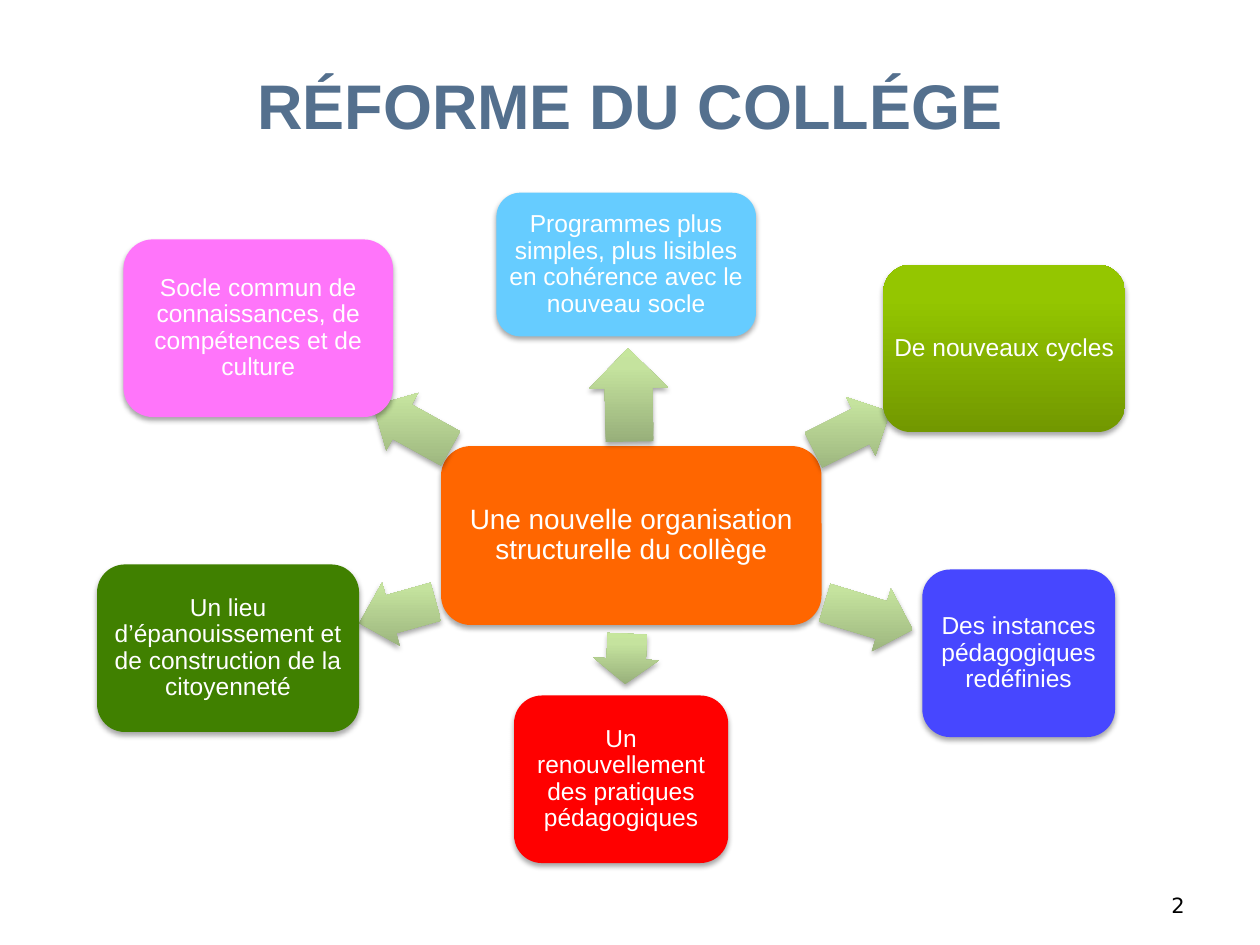
from lxml import etree
from pptx import Presentation
from pptx.dml.color import RGBColor
from pptx.enum.shapes import MSO_SHAPE
from pptx.enum.text import MSO_ANCHOR, PP_ALIGN
from pptx.oxml import parse_xml
from pptx.oxml.ns import nsdecls
from pptx.util import Inches, Pt

ROUND, ARROW = MSO_SHAPE.ROUNDED_RECTANGLE, MSO_SHAPE.RIGHT_ARROW
CENTER, RIGHT = PP_ALIGN.CENTER, PP_ALIGN.RIGHT
TOP, MIDDLE, BOTTOM = MSO_ANCHOR.TOP, MSO_ANCHOR.MIDDLE, MSO_ANCHOR.BOTTOM

COLORS = {
    "title": "54708E", "white": "FFFFFF", "black": "000000",
    "orange": "FF6600", "sky": "66CCFF", "blue": "4747FF",
    "red": "FF0000", "green": "408000", "pink": "FF75FA",
}
# Gradients run from bottom to top: (position in percent, colour)
FADES = {
    "lime": [(0, "729800"), (80, "94C600"), (100, "95C700")],
    "arrow": [(0, "97AF7A"), (80, "C5E39E"), (100, "C6E69D")],
}

TITLE = "RÉFORME DU COLLÉGE"
HUB = ("Une nouvelle organisation structurelle du collège", "orange",
       (3.5, 3.54, 3.02, 1.42))
# Text, fill, box place, arrow place, arrow rotation
THEMES = [
    ("Programmes plus simples, plus lisibles en cohérence avec le nouveau socle",
     "sky", (3.94, 1.53, 2.06, 1.14), (4.62, 2.82, 0.74, 0.63), 269),
    ("De nouveaux cycles",
     "lime", (7.01, 2.1, 1.92, 1.33), (6.42, 3.16, 0.68, 0.52), 333.4),
    ("Des instances pédagogiques redéfinies",
     "blue", (7.32, 4.52, 1.53, 1.33), (6.53, 4.63, 0.73, 0.52), 17),
    ("Un renouvellement des pratiques pédagogiques",
     "red", (4.08, 5.52, 1.7, 1.33), (4.77, 4.97, 0.4, 0.52), 92.4),
    ("Un lieu d’épanouissement et de construction de la citoyenneté",
     "green", (0.77, 4.48, 2.08, 1.33), (2.84, 4.6, 0.63, 0.52), 164.3),
    ("Socle commun de connaissances, de compétences et de culture",
     "pink", (0.98, 1.9, 2.14, 1.41), (2.92, 3.13, 0.7, 0.52), 209),
]

prs = Presentation()
prs.slide_width, prs.slide_height = Inches(10), Inches(7.5)
slide = prs.slides.add_slide(prs.slide_layouts[6])


def write(shape, text, size, color, align=CENTER, anchor=MIDDLE,
          font="Arial", bold=False):
    frame = shape.text_frame
    frame.text = text
    frame.word_wrap = True
    frame.vertical_anchor = anchor
    para = frame.paragraphs[0]
    para.alignment = align
    face = para.runs[0].font
    face.name, face.size, face.bold = font, Pt(size), bold
    face.color.rgb = RGBColor.from_string(COLORS[color])
    return para


def fade(shape, stops):
    """Fill with a gradient that stays upright when the shape turns."""
    shape.fill.gradient()
    grad = shape._element.spPr.find("{*}gradFill")
    grad.set("rotWithShape", "0")
    for part in list(grad):
        grad.remove(part)
    marks = "".join(f'<a:gs pos="{pos * 1000}"><a:srgbClr val="{color}"/></a:gs>'
                    for pos, color in stops)
    grad.append(parse_xml(f'<a:gsLst {nsdecls("a")}>{marks}</a:gsLst>'))
    grad.append(parse_xml(f'<a:lin {nsdecls("a")} ang="16200000" scaled="0"/>'))


def draw(kind, place, fill):
    shape = slide.shapes.add_shape(kind, *map(Inches, place))
    if fill in FADES:
        fade(shape, FADES[fill])
    else:
        shape.fill.solid()
        shape.fill.fore_color.rgb = RGBColor.from_string(COLORS[fill])
    shape.line.fill.background()
    # Soft shadow straight below
    shape.shadow.inherit = False
    effects = shape._element.spPr.find("{*}effectLst")
    glow = etree.SubElement(
        effects, effects.tag.replace("effectLst", "outerShdw"),
        blurRad=str(Pt(3.1)), dist=str(Pt(1.8)), dir="5400000", rotWithShape="0")
    tint = etree.SubElement(glow, glow.tag.replace("outerShdw", "srgbClr"),
                            val=COLORS["black"])
    etree.SubElement(tint, tint.tag.replace("srgbClr", "alpha"), val="35000")
    return shape


def card(text, fill, place, size):
    box = draw(ROUND, place, fill)
    frame = box.text_frame
    frame.margin_left = frame.margin_right = Inches(0.02)
    frame.margin_top = frame.margin_bottom = Inches(0.02)
    write(box, text, size, "white").line_spacing = 0.9


# Slide number
number = slide.shapes.add_textbox(*map(Inches, (7.17, 6.83, 2.33, 0.5)))
write(number, "2", 12, "black", RIGHT, BOTTOM, "DejaVu Sans")

# Hub, then each theme with its arrow
card(*HUB, 16)
for text, fill, place, spot, turn in THEMES:
    arrow = draw(ARROW, spot, "arrow")
    arrow.adjustments[0], arrow.adjustments[1] = 0.6, 0.5
    arrow.rotation = turn
    card(text, fill, place, 14)

# Title
title = slide.shapes.add_textbox(*map(Inches, (0.47, 0.48, 9.06, 0.71)))
write(title, TITLE, 36, "title", anchor=TOP, bold=True)

prs.save("out.pptx")
